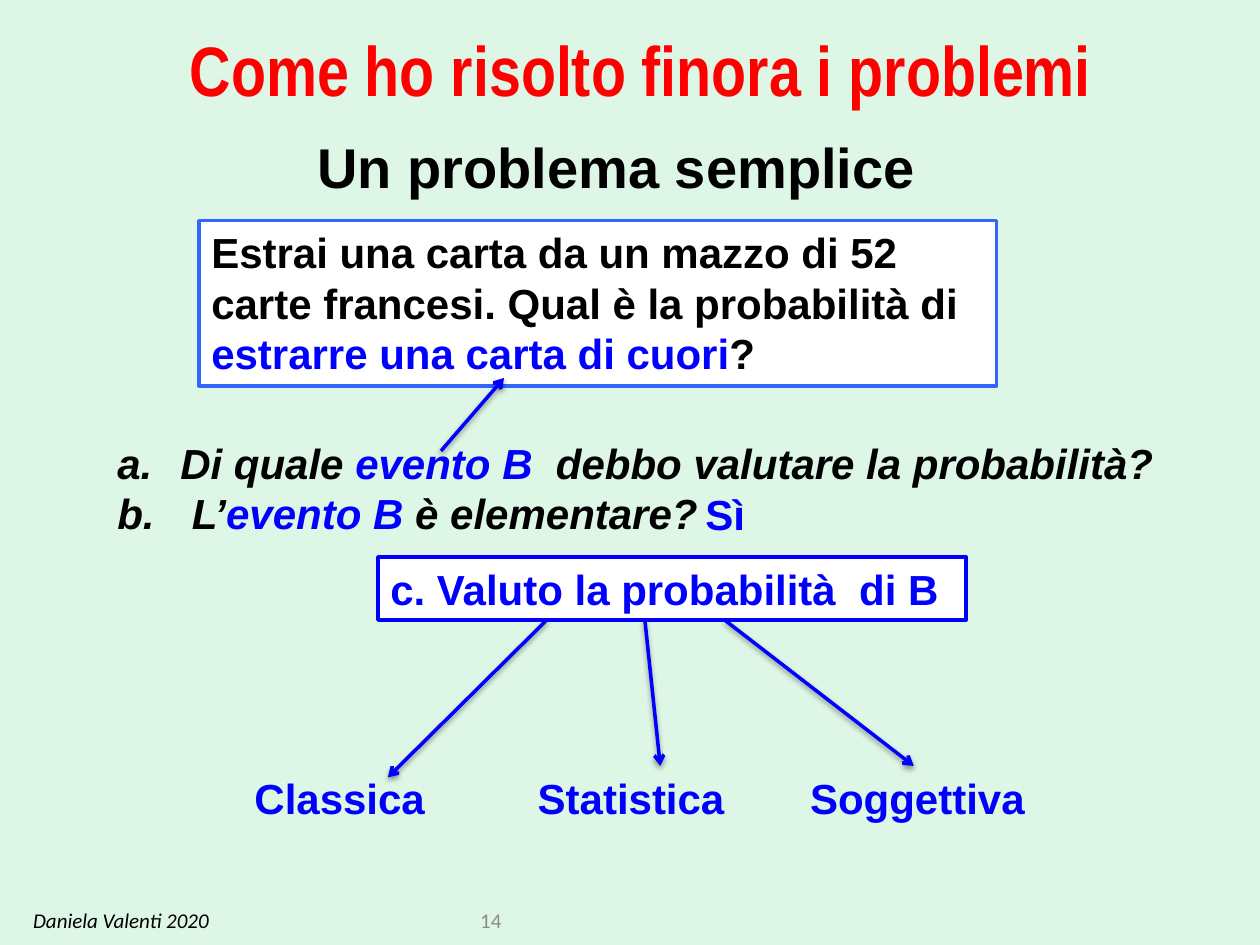
from dataclasses import dataclass
from typing import NamedTuple

from lxml import etree
from pptx import Presentation
from pptx.dml.color import RGBColor
from pptx.enum.shapes import MSO_CONNECTOR, MSO_SHAPE
from pptx.enum.text import MSO_ANCHOR, MSO_AUTO_SIZE, PP_ALIGN
from pptx.oxml import parse_xml
from pptx.oxml.ns import nsdecls, qn
from pptx.util import Cm, Pt

LEFT, CENTER, RIGHT = PP_ALIGN.LEFT, PP_ALIGN.CENTER, PP_ALIGN.RIGHT
TOP, MIDDLE = MSO_ANCHOR.TOP, MSO_ANCHOR.MIDDLE
NO_AUTOFIT = MSO_AUTO_SIZE.NONE
STRAIGHT = MSO_CONNECTOR.STRAIGHT
RECTANGLE = MSO_SHAPE.RECTANGLE


@dataclass(frozen=True)
class Theme:
    background: str = "DEF6E5"
    title: str = "FF0000"
    text: str = "000000"
    accent: str = "0000FF"
    frame: str = "3366FF"
    panel: str = "FFFFFF"
    muted: str = "8C8C8C"
    title_size: int = 40
    heading_size: int = 32
    body_size: int = 24
    footer_size: int = 12
    line_width: int = 2


THEME = Theme()


class Area(NamedTuple):
    left: float
    top: float
    width: float
    height: float


class Style(NamedTuple):
    color: str = THEME.text
    size: int = THEME.body_size
    font: str = "Arial"
    bold: bool = True
    italic: bool = False


class Arrow(NamedTuple):
    start: tuple[float, float]
    end: tuple[float, float]


class Label(NamedTuple):
    text: str
    area: Area
    style: Style
    alignment: PP_ALIGN = LEFT
    anchor: MSO_ANCHOR = TOP
    wrap: bool = True


class Panel(NamedTuple):
    pieces: list[tuple[str, Style]]
    area: Area
    border: str


PLAIN = Style()
ACCENT = Style(THEME.accent)
ITALIC = Style(italic=True)
ACCENT_ITALIC = Style(THEME.accent, italic=True)
FOOTER = Style(size=THEME.footer_size, font="Calibri", bold=False, italic=True)
NUMBER = Style(THEME.muted, THEME.footer_size, "Calibri", False)

TITLE_AREA = Area(1.27, 0.43, 23.29, 1.91)
LIST_AREA = Area(2.11, 8.69, 21.79, 2.34)
LIST_INDENT = 1.27
LABEL_HEIGHT = 1.27
METHOD_TOP = 15.44
PANEL_BOTTOM = 12.5

QUESTIONS = [
    [("Di quale ", ITALIC), ("evento B ", ACCENT_ITALIC),
     (" debbo valutare la probabilità?", ITALIC)],
    [(" L’", ITALIC), ("evento B", ACCENT_ITALIC), (" è elementare?", ITALIC)],
]

PANELS = [
    Panel([("Estrai una carta da un mazzo di 52 carte francesi. "
            "Qual è la probabilità di ", PLAIN),
           ("estrarre una carta di cuori", ACCENT), ("?", PLAIN)],
          Area(4.01, 4.45, 16.08, 3.33), THEME.frame),
    Panel([("c. Valuto la probabilità  di B", ACCENT)],
          Area(7.62, 11.23, 11.86, LABEL_HEIGHT), THEME.accent),
]

LABELS = [
    Label("Un problema semplice", Area(6.15, 2.54, 12.67, 1.63),
          Style(size=THEME.heading_size), wrap=False),
    Label("Sì", Area(13.97, 9.73, 1.47, LABEL_HEIGHT), ACCENT),
    Label("Classica", Area(4.88, METHOD_TOP, 4.19, LABEL_HEIGHT), ACCENT),
    Label("Statistica", Area(10.59, METHOD_TOP, 4.88, LABEL_HEIGHT), ACCENT),
    Label("Soggettiva", Area(16.08, METHOD_TOP, 5.51, LABEL_HEIGHT), ACCENT),
    Label("Daniela Valenti 2020", Area(0, 18.03, 4.88, 1.02), FOOTER, CENTER, MIDDLE),
    Label("14", Area(9.09, 18.03, 1.27, 1.02), NUMBER, RIGHT, MIDDLE),
]

ARROWS = [
    Arrow((8.89, 9.09), (10.16, 7.62)),
    Arrow((11.02, PANEL_BOTTOM), (7.82, 15.67)),
    Arrow((13.0, PANEL_BOTTOM), (13.31, METHOD_TOP)),
    Arrow((14.61, PANEL_BOTTOM), (18.42, METHOD_TOP)),
]

SHADOW = (f'<a:effectLst {nsdecls("a")}><a:outerShdw blurRad="{Pt(3.1)}" '
          f'dist="{Pt(1.6)}" dir="5400000" rotWithShape="0"><a:srgbClr val="000000">'
          '<a:alpha val="38000"/></a:srgbClr></a:outerShdw></a:effectLst>')


def color(value: str) -> RGBColor:
    return RGBColor.from_string(value)


def place(shape, area: Area) -> None:
    shape.left, shape.top, shape.width, shape.height = map(Cm, area)


def add_run(paragraph, text: str, style: Style) -> None:
    run = paragraph.add_run()
    run.text = text
    font = run.font
    font.name, font.size = style.font, Pt(style.size)
    font.bold, font.italic = style.bold, style.italic
    font.color.rgb = color(style.color)


def prepare_frame(shape, anchor: MSO_ANCHOR = TOP, wrap: bool = True):
    frame = shape.text_frame
    frame.word_wrap = wrap
    frame.auto_size = NO_AUTOFIT
    frame.vertical_anchor = anchor
    return frame


def add_label(slide, label: Label) -> None:
    box = slide.shapes.add_textbox(*map(Cm, label.area))
    paragraph = prepare_frame(box, label.anchor, label.wrap).paragraphs[0]
    paragraph.alignment = label.alignment
    add_run(paragraph, label.text, label.style)


def add_panel(slide, panel: Panel) -> None:
    shape = slide.shapes.add_shape(RECTANGLE, *map(Cm, panel.area))
    shape.shadow.inherit = False
    shape.fill.solid()
    shape.fill.fore_color.rgb = color(THEME.panel)
    shape.line.color.rgb = color(panel.border)
    shape.line.width = Pt(THEME.line_width)
    paragraph = prepare_frame(shape).paragraphs[0]
    paragraph.alignment = LEFT
    for text, style in panel.pieces:
        add_run(paragraph, text, style)


def add_arrow(slide, arrow: Arrow) -> None:
    connector = slide.shapes.add_connector(STRAIGHT, *map(Cm, arrow.start + arrow.end))
    connector.line.color.rgb = color(THEME.accent)
    connector.line.width = Pt(THEME.line_width)
    etree.SubElement(connector.line._get_or_add_ln(), qn("a:tailEnd"), type="arrow")
    connector._element.spPr.append(parse_xml(SHADOW))


def fill_title(slide) -> None:
    title = slide.shapes.title
    place(title, TITLE_AREA)
    paragraph = prepare_frame(title, MIDDLE).paragraphs[0]
    paragraph.alignment = CENTER
    add_run(paragraph, "Come ho risolto finora i problemi",
            Style(THEME.title, THEME.title_size, "Arial Narrow"))


def fill_questions(slide) -> None:
    body = slide.placeholders[1]
    place(body, LIST_AREA)
    frame = prepare_frame(body)
    for index, pieces in enumerate(QUESTIONS):
        paragraph = frame.add_paragraph() if index else frame.paragraphs[0]
        paragraph.space_before = Pt(0)
        properties = paragraph._p.get_or_add_pPr()
        properties.set("marL", str(Cm(LIST_INDENT)))
        properties.set("indent", str(-Cm(LIST_INDENT)))
        etree.SubElement(properties, qn("a:buFont"), typeface="+mj-lt")
        etree.SubElement(properties, qn("a:buAutoNum"), type="alphaLcPeriod")
        for text, style in pieces:
            add_run(paragraph, text, style)


def main() -> None:
    presentation = Presentation()
    presentation.slide_width, presentation.slide_height = Cm(25.4), Cm(19.05)
    slide = presentation.slides.add_slide(presentation.slide_layouts[1])
    slide.background.fill.solid()
    slide.background.fill.fore_color.rgb = color(THEME.background)

    # Title and list of questions
    fill_title(slide)
    fill_questions(slide)
    # Framed problem and final step
    for panel in PANELS:
        add_panel(slide, panel)
    # Heading, answer, methods and footer
    for label in LABELS:
        add_label(slide, label)
    # Links between the parts
    for arrow in ARROWS:
        add_arrow(slide, arrow)

    presentation.save("out.pptx")


if __name__ == "__main__":
    main()
